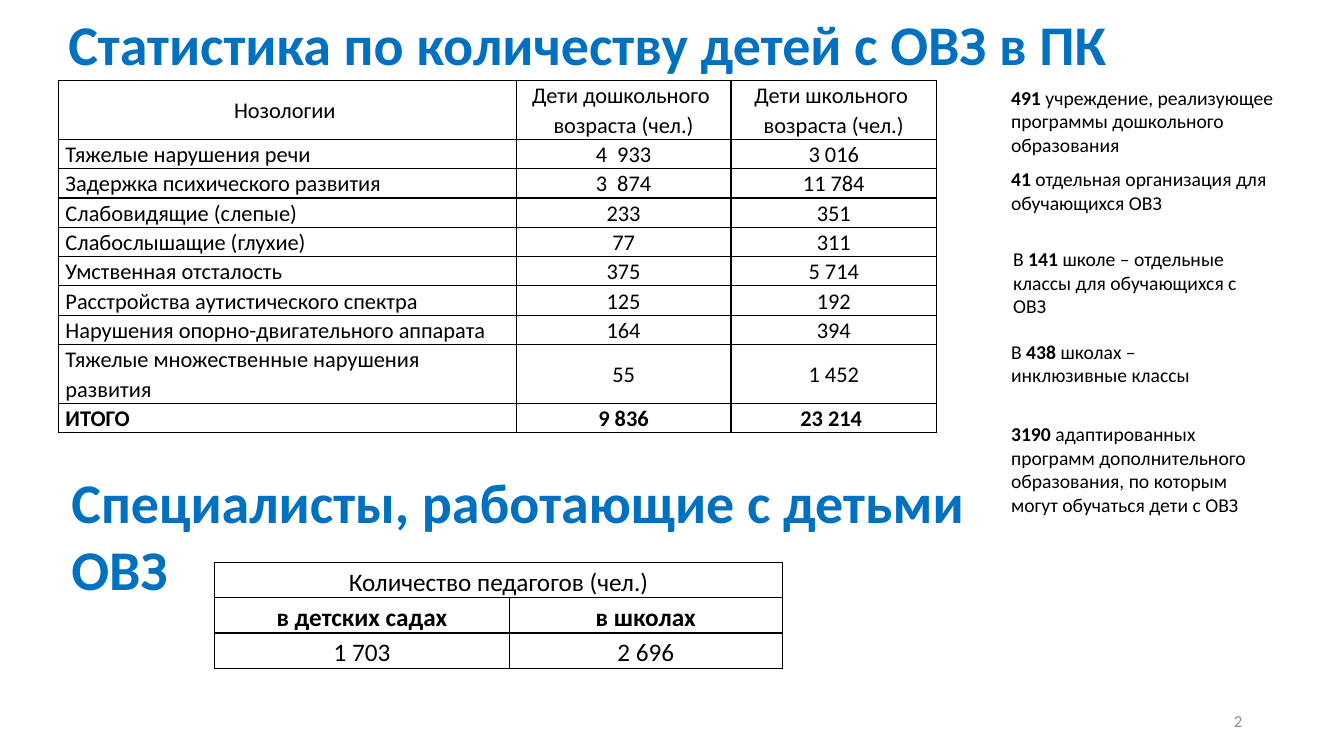
from dataclasses import dataclass

from pptx import Presentation
from pptx.dml.color import RGBColor
from pptx.enum.text import MSO_ANCHOR, MSO_AUTO_SIZE, PP_ALIGN
from pptx.oxml import parse_xml
from pptx.oxml.ns import nsdecls
from pptx.util import Inches, Pt

TOP, MID = MSO_ANCHOR.TOP, MSO_ANCHOR.MIDDLE
LEFT, CENTER, RIGHT = PP_ALIGN.LEFT, PP_ALIGN.CENTER, PP_ALIGN.RIGHT
GROW, FIXED = MSO_AUTO_SIZE.SHAPE_TO_FIT_TEXT, MSO_AUTO_SIZE.NONE


@dataclass(frozen=True)
class Theme:
    """Hold the colours, font and type sizes of the slide."""
    face: str = "Calibri"
    blue: str = "0070C0"
    black: str = "000000"
    white: str = "FFFFFF"
    gray: str = "8C8C8C"
    head: int = 40
    staff: int = 18
    body: int = 16
    note: int = 14
    page: int = 12


THEME = Theme()

COUNTS = [
    ("Нозологии ", "Дети дошкольного \nвозраста (чел.)", "Дети школьного \nвозраста (чел.)"),
    ("Тяжелые нарушения речи", "4  933", "3 016"),
    ("Задержка психического развития", "3  874", "11 784"),
    ("Слабовидящие (слепые)", "233", "351"),
    ("Слабослышащие (глухие)", "77", "311"),
    ("Умственная отсталость", "375", "5 714"),
    ("Расстройства аутистического спектра", "125", "192"),
    ("Нарушения опорно-двигательного аппарата", "164", "394"),
    ("Тяжелые множественные нарушения развития", "55", "1 452"),
    ("*ИТОГО*", "*9 836*", "*23 214 *"),
]

STAFF = [
    ("Количество педагогов (чел.)", ""),
    ("*в детских садах*", "*в школах*"),
    ("1 703", "2 696"),
]

NOTES = [
    ((9.93, 0.8, 2.82, 0.81), "*491* учреждение, реализующее программы дошкольного образования"),
    ((9.93, 1.61, 2.87, 0.57), "*41* отдельная организация для обучающихся ОВЗ"),
    ((9.95, 2.4, 2.47, 0.81), "В *141* школе – отдельные классы для обучающихся с ОВЗ"),
    ((9.93, 3.32, 2.47, 0.57), "В *438* школах – инклюзивные классы"),
    ((9.93, 4.14, 2.63, 1.04),
     "*3190 *адаптированных программ дополнительного образования, по которым могут обучаться дети с ОВЗ"),
]


def apply(item, values):
    """Set each attribute of an item from a dict."""
    for name, value in values.items():
        setattr(item, name, value)


def write(frame, text, size, color, align=LEFT, space=1.0):
    """Write lines of text, with bold parts between asterisks."""
    for row, line in enumerate(text.split("\n")):
        para = frame.add_paragraph() if row else frame.paragraphs[0]
        apply(para, {"alignment": align, "line_spacing": space})
        for part, words in enumerate(line.split("*")):
            if words:
                run = para.add_run()
                run.text = words
                apply(run.font, {"name": THEME.face, "size": Pt(size), "bold": part % 2 == 1})
                run.font.color.rgb = RGBColor.from_string(color)


def add_text(slide, box, text, size, color, anchor=TOP, fit=GROW, **para):
    """Add a wrapped text box."""
    frame = slide.shapes.add_textbox(*map(Inches, box)).text_frame
    apply(frame, {"word_wrap": True, "auto_size": fit, "vertical_anchor": anchor})
    write(frame, text, size, color, **para)


def add_edges(cell):
    """Draw a thin line on all four sides of a cell."""
    props = cell._tc.get_or_add_tcPr()
    for side in "LRTB":
        props.append(parse_xml(
            f'<a:ln{side} {nsdecls("a")} w="{Pt(1)}"><a:solidFill>'
            f'<a:srgbClr val="{THEME.black}"/></a:solidFill></a:ln{side}>'))


def add_grid(slide, place, widths, heights, rows, size, space, first):
    """Add a ruled table whose first body column has its own alignment."""
    area = (*place, sum(widths), sum(heights))
    grid = slide.shapes.add_table(len(rows), len(widths), *map(Inches, area)).table
    apply(grid, {"first_row": False, "horz_banding": False})
    for col, width in zip(grid.columns, widths):
        col.width = Inches(width)
    for line, height in zip(grid.rows, heights):
        line.height = Inches(height)
    for r, row in enumerate(rows):
        for c, text in enumerate(row):
            cell = grid.cell(r, c)
            apply(cell, {"vertical_anchor": MID, "margin_top": 0, "margin_bottom": 0,
                         "margin_left": Inches(0.07), "margin_right": Inches(0.07)})
            add_edges(cell)
            cell.fill.solid()
            cell.fill.fore_color.rgb = RGBColor.from_string(THEME.white)
            align = first if r and not c else CENTER
            write(cell.text_frame, text, size, THEME.black, align, space)
    return grid


def main():
    """Build the slide and save it."""
    deck = Presentation()
    apply(deck, {"slide_width": Inches(13.33), "slide_height": Inches(7.5)})
    slide = deck.slides.add_slide(deck.slide_layouts[6])
    add_text(slide, (0.58, 0.25, 11.5, 0.44), "*Статистика по количеству детей с ОВЗ в ПК*",
             THEME.head, THEME.blue, MID, FIXED, space=0.9)
    add_text(slide, (9.42, 6.95, 3, 0.4), "2", THEME.page, THEME.gray, MID, FIXED, align=RIGHT)
    add_grid(slide, (0.58, 0.8), (4.54, 2.13, 2.04), [0.58] + [0.29] * 7 + [0.58, 0.29],
             COUNTS, THEME.body, 1.07, LEFT)
    for box, text in NOTES:
        add_text(slide, box, text, THEME.note, THEME.black)
    add_text(slide, (0.61, 4.59, 9.08, 1.45), "*Специалисты, работающие с детьми ОВЗ*",
             THEME.head, THEME.blue)
    staff = add_grid(slide, (2.13, 5.58), (2.92, 2.71), [0.35] * 3,
                     STAFF, THEME.staff, 1.15, CENTER)
    staff.cell(0, 0).merge(staff.cell(0, 1))
    deck.save("out.pptx")


if __name__ == "__main__":
    main()
